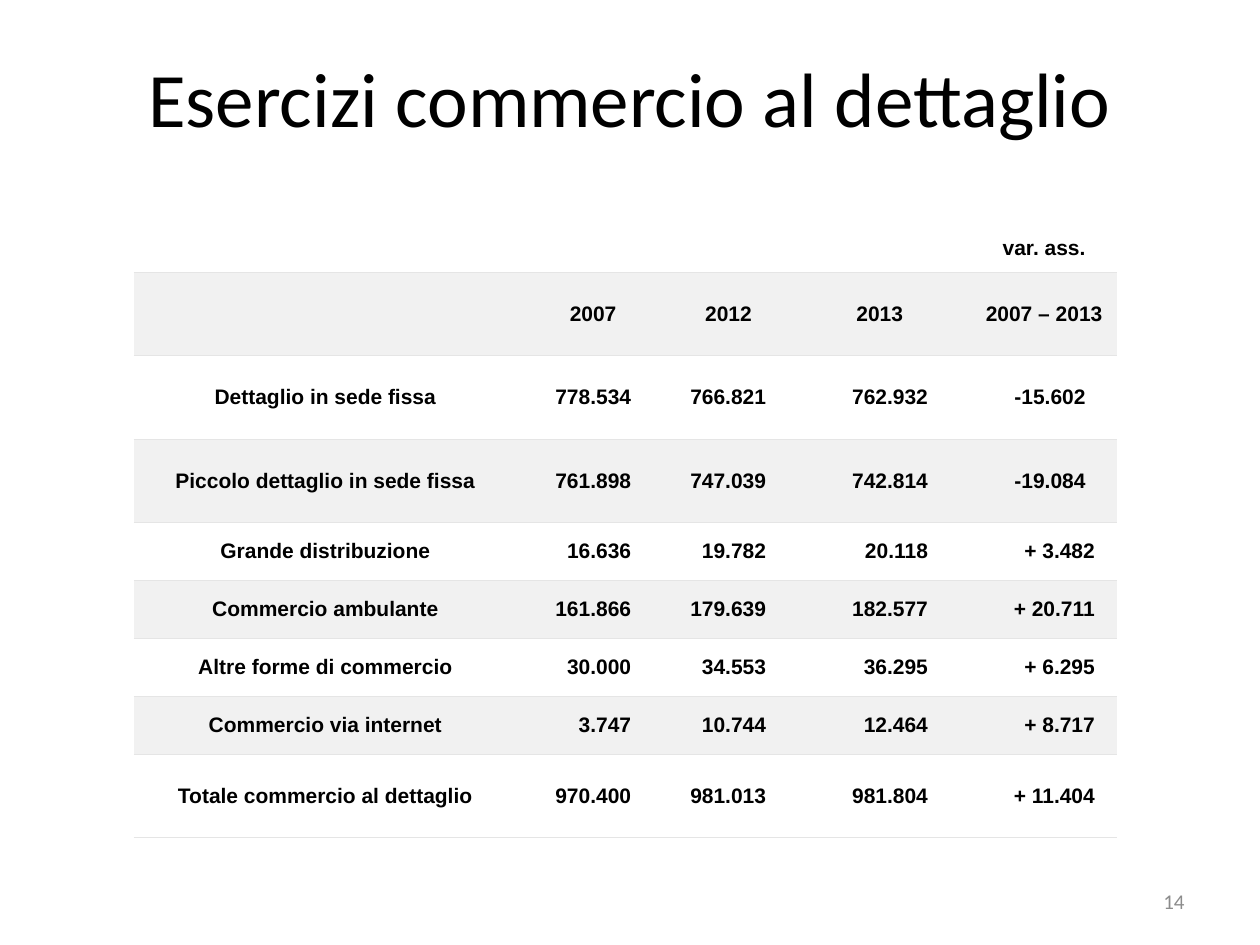
from lxml.etree import SubElement
from pptx import Presentation
from pptx.dml.color import RGBColor
from pptx.enum.text import MSO_ANCHOR as ANCHOR, PP_ALIGN as ALIGN
from pptx.oxml.ns import qn
from pptx.util import Pt

BLACK = RGBColor(0x00, 0x00, 0x00)
WHITE = RGBColor(0xFF, 0xFF, 0xFF)
BAND = RGBColor(0xF1, 0xF1, 0xF1)
RULE = RGBColor(0xE5, 0xE5, 0xE5)
GREY = RGBColor(0x8C, 0x8C, 0x8C)

TITLE_FONT = {"name": "Calibri", "size": Pt(44)}
CELL_FONT = {"name": "Arial", "size": Pt(12), "bold": True}
NUMBER_FONT = {"name": "Calibri", "size": Pt(12)}

COL_WIDTHS = [218.9, 87.1, 67.7, 105.1, 82.8]
ROW_HEIGHTS = [27.4] + [47.7] * 3 + [33.1] * 4 + [47.7]
RIGHT_INSETS = [2.16, 21.8, 12.4, 25, 12.4]
NEGATIVE_INSET = 17.7
HEADER_ROWS = 2

ROWS = [
    ["", "", "", "", "var. ass."],
    ["", "2007", "2012", "2013", "2007 – 2013"],
    ["Dettaglio in sede fissa", "778.534", "766.821", "762.932", "-15.602"],
    ["Piccolo dettaglio in sede fissa", "761.898", "747.039", "742.814", "-19.084"],
    ["Grande distribuzione", "16.636", "19.782", "20.118", "+ 3.482"],
    ["Commercio ambulante", "161.866", "179.639", "182.577", "+ 20.711"],
    ["Altre forme di commercio", "30.000", "34.553", "36.295", "+ 6.295"],
    ["Commercio via internet", "3.747", "10.744", "12.464", "+ 8.717"],
    ["Totale commercio al dettaglio", "970.400", "981.013", "981.804", "+ 11.404"],
]


class SlideBuilder:
    """Holds the current slide and the style of its elements."""

    def __init__(self, slide):
        self.slide = slide

    def fill_text(self, tf, text, font, color, align):
        tf.word_wrap = True
        tf.vertical_anchor = ANCHOR.MIDDLE
        p = tf.paragraphs[0]
        p.alignment = align
        r = p.add_run()
        r.text = text
        r.font.color.rgb = color
        for name, value in font.items():
            setattr(r.font, name, value)

    def title(self, text, left, top, width, height):
        sp = self.slide.shapes.title
        sp.left, sp.top, sp.width, sp.height = map(Pt, (left, top, width, height))
        self.fill_text(sp.text_frame, text, TITLE_FONT, BLACK, ALIGN.CENTER)

    def text(self, text, left, top, width, height, font, color, align):
        sp = self.slide.shapes.add_textbox(*map(Pt, (left, top, width, height)))
        self.fill_text(sp.text_frame, text, font, color, align)

    def borders(self, cell, visible):
        """Rule the sides named in visible and clear the others."""
        tc_pr = cell._tc.get_or_add_tcPr()
        for side in "LRTB":
            ln = SubElement(tc_pr, qn(f"a:ln{side}"), w=str(Pt(0.6)))
            if side in visible:
                fill = SubElement(ln, qn("a:solidFill"))
                SubElement(fill, qn("a:srgbClr"), val=str(RULE))
            else:
                SubElement(ln, qn("a:noFill"))

    def cell(self, cell, text, row, col):
        self.borders(cell, "TB" if row else "B")
        cell.fill.solid()
        cell.fill.fore_color.rgb = BAND if row % 2 else WHITE
        for side in ("left", "right", "top", "bottom"):
            setattr(cell, f"margin_{side}", Pt(2.16))
        cell.vertical_anchor = ANCHOR.MIDDLE
        if not text:
            return
        align = ALIGN.CENTER
        if row >= HEADER_ROWS and col > 0:
            align = ALIGN.RIGHT
            negative = text.startswith("-")
            cell.margin_right = Pt(NEGATIVE_INSET if negative else RIGHT_INSETS[col])
        self.fill_text(cell.text_frame, text, CELL_FONT, BLACK, align)

    def table(self, rows, left, top):
        size = (sum(COL_WIDTHS), sum(ROW_HEIGHTS))
        frame = self.slide.shapes.add_table(
            len(rows), len(COL_WIDTHS), Pt(left), Pt(top), *map(Pt, size))
        table = frame.table
        table.first_row = table.horz_banding = False
        for column, width in zip(table.columns, COL_WIDTHS):
            column.width = Pt(width)
        for row, height in zip(table.rows, ROW_HEIGHTS):
            row.height = Pt(height)
        for i, row in enumerate(rows):
            for j, text in enumerate(row):
                self.cell(table.cell(i, j), text, i, j)


def main():
    prs = Presentation()
    prs.slide_width, prs.slide_height = Pt(720), Pt(540)
    builder = SlideBuilder(prs.slides.add_slide(prs.slide_layouts[5]))
    builder.title("Esercizi commercio al dettaglio", 36, 21.6, 648, 67)
    builder.table(ROWS, 76.5, 128.2)
    builder.text("14", 516, 500.5, 168, 28.8, NUMBER_FONT, GREY, ALIGN.RIGHT)
    prs.save("out.pptx")


if __name__ == "__main__":
    main()
